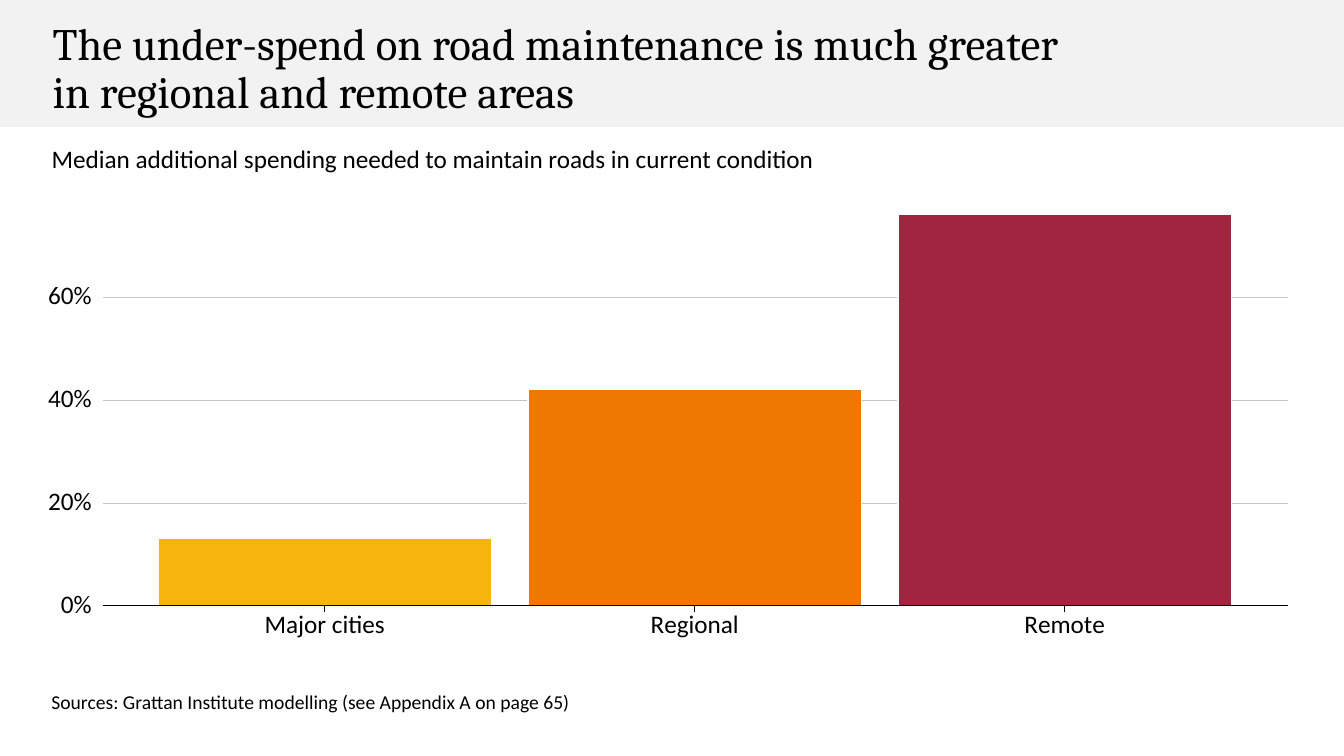
from lxml.etree import SubElement
from pptx import Presentation
from pptx.chart.data import CategoryChartData
from pptx.dml.color import RGBColor
from pptx.enum.chart import XL_CHART_TYPE as ChartType
from pptx.enum.chart import XL_TICK_LABEL_POSITION as LabelPosition
from pptx.enum.chart import XL_TICK_MARK as TickMark
from pptx.enum.shapes import MSO_CONNECTOR as Connector, MSO_SHAPE as Shape
from pptx.enum.text import MSO_ANCHOR as Anchor, PP_ALIGN as Align
from pptx.oxml.ns import qn
from pptx.util import Inches, Pt

WIDTH, HEIGHT = Inches(13.33), Inches(7.5)
COL, ROW = WIDTH / 100, HEIGHT / 100

BLACK = RGBColor(0x00, 0x00, 0x00)
WHITE = RGBColor(0xFF, 0xFF, 0xFF)
BAND = RGBColor(0xF2, 0xF2, 0xF2)
GRID = RGBColor(0xC3, 0xC7, 0xCB)
YELLOW = RGBColor(0xF5, 0xB5, 0x0C)
ORANGE = RGBColor(0xEF, 0x79, 0x00)
RED = RGBColor(0xA1, 0x25, 0x3E)

SPENDING = [
    ("Major cities", 13, YELLOW),
    ("Regional", 42, ORANGE),
    ("Remote", 76, RED),
]
CHART_AREA = (3.08, 26.4, 93.6, 62.53)
PLOT_AREA = (10.4, 27.73, 82.59, 52.4)
GRID_LEFT, GRID_RIGHT = 7.65, 95.8
BASELINE = PLOT_AREA[1] + PLOT_AREA[3]
AXIS_MAX, AXIS_STEP = 77, 20


def place(area):
    x, y, w, h = area
    return [round(n) for n in (x * COL, y * ROW, w * COL, h * ROW)]


def style_line(line, color, width):
    line.color.rgb = color
    line.width = Pt(width)


def add_band(s, area):
    sp = s.shapes.add_shape(Shape.RECTANGLE, *place(area))
    sp.shadow.inherit = False
    sp.fill.solid()
    sp.fill.fore_color.rgb = BAND
    sp.line.fill.background()


def add_line(s, ends, color, width):
    line = s.shapes.add_connector(Connector.STRAIGHT, *place(ends))
    style_line(line.line, color, width)
    SubElement(line._element.spPr, qn("a:effectLst"))


def add_text(s, area, text, size=18, font="Calibri", anchor=Anchor.TOP,
             align=Align.LEFT, inset=0.1):
    tf = s.shapes.add_textbox(*place(area)).text_frame
    tf.word_wrap = True
    tf.vertical_anchor = anchor
    tf.margin_left = tf.margin_right = Inches(inset)
    tf.margin_top = tf.margin_bottom = Inches(inset / 2)
    p = tf.paragraphs[0]
    p.alignment = align
    p.line_spacing = 0.9
    r = p.add_run()
    r.text = text
    r.font.size = Pt(size)
    r.font.name = font
    r.font.color.rgb = BLACK


def add_scale(s):
    for value in range(0, AXIS_MAX, AXIS_STEP):
        y = BASELINE - value / AXIS_MAX * PLOT_AREA[3]
        add_line(s, (GRID_LEFT, y, GRID_RIGHT, y), GRID, 0.37)
        add_text(s, (2.8, y - 1.7, 4.02, 3.2), f"{value}%",
                 anchor=Anchor.MIDDLE, align=Align.RIGHT, inset=0)


def add_baseline(s):
    add_line(s, (GRID_LEFT, BASELINE, GRID_RIGHT, BASELINE), BLACK, 0.75)
    step = PLOT_AREA[2] / len(SPENDING)
    for i in range(len(SPENDING)):
        x = PLOT_AREA[0] + (i + 0.5) * step
        add_line(s, (x, BASELINE + 0.8, x, BASELINE), BLACK, 0.56)


def fix_plot_area(chart):
    cx, cy, cw, ch = CHART_AREA
    px, py, pw, ph = PLOT_AREA
    plot_area = chart.plots[0]._element.getparent()
    layout = plot_area.find(qn("c:layout"))
    if layout is None:
        layout = SubElement(plot_area, qn("c:layout"))
        plot_area.insert(0, layout)
    manual = SubElement(layout, qn("c:manualLayout"))
    settings = [
        ("layoutTarget", "inner"), ("xMode", "edge"), ("yMode", "edge"),
        ("x", (px - cx) / cw), ("y", (py - cy) / ch),
        ("w", pw / cw), ("h", ph / ch),
    ]
    for tag, value in settings:
        SubElement(manual, qn(f"c:{tag}")).set("val", str(value))


def style_axes(chart):
    values = chart.value_axis
    values.minimum_scale = 0
    values.maximum_scale = AXIS_MAX
    values.major_unit = AXIS_STEP
    values.has_major_gridlines = False
    values.tick_label_position = LabelPosition.NONE
    for axis in (values, chart.category_axis):
        axis.major_tick_mark = TickMark.NONE
        axis.format.line.fill.background()


def add_spending_chart(s):
    names, values, colors = zip(*SPENDING)
    data = CategoryChartData(number_format='0"%"')
    data.categories = names
    data.add_series("Additional spending needed", values)
    chart = s.shapes.add_chart(
        ChartType.COLUMN_CLUSTERED, *place(CHART_AREA), data).chart
    chart.has_legend = False
    chart.has_title = False
    chart.font.name = "Calibri"
    chart.font.size = Pt(18)
    chart.font.color.rgb = BLACK
    plot = chart.plots[0]
    plot.vary_by_categories = False
    plot.gap_width = 11
    for i, color in enumerate(colors):
        bar = plot.series[0].points[i].format
        bar.fill.solid()
        bar.fill.fore_color.rgb = color
        style_line(bar.line, WHITE, 1.07)
    style_axes(chart)
    fix_plot_area(chart)


def main():
    prs = Presentation()
    prs.slide_width, prs.slide_height = WIDTH, HEIGHT
    s = prs.slides.add_slide(prs.slide_layouts[6])
    add_band(s, (0, 0, 100, 16.8))
    add_text(s, (3.18, 5.33, 78, 7.87),
             "The under-spend on road maintenance is much greater "
             "in regional and remote areas",
             size=32, font="Cambria", anchor=Anchor.MIDDLE)
    add_text(s, (3.1, 18.75, 93.55, 4.93),
             "Median additional spending needed to maintain roads "
             "in current condition")
    add_scale(s)
    add_spending_chart(s)
    add_baseline(s)
    add_text(s, (3.08, 90.93, 87.47, 6.67),
             "Sources: Grattan Institute modelling (see Appendix A on page 65)",
             size=14)
    prs.save("out.pptx")


if __name__ == "__main__":
    main()
